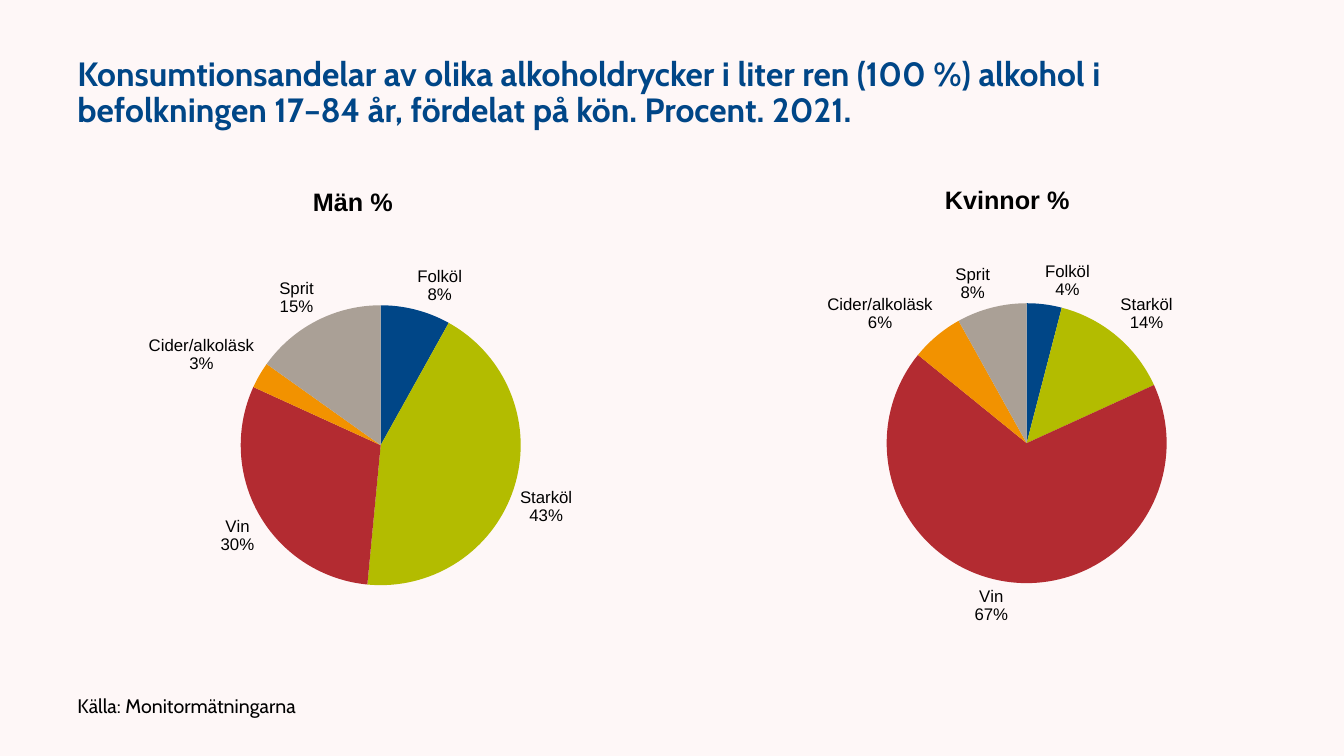
"""Build a slide comparing alcohol consumption shares of men and women."""
from dataclasses import dataclass

from lxml.etree import SubElement
from pptx import Presentation
from pptx.chart.chart import Chart
from pptx.chart.data import CategoryChartData
from pptx.dml.color import RGBColor
from pptx.enum.chart import XL_CHART_TYPE as ChartType, XL_LABEL_POSITION as LabelPos
from pptx.enum.text import MSO_ANCHOR as Anchor
from pptx.oxml.ns import qn
from pptx.slide import Slide
from pptx.text.text import Font
from pptx.util import Inches, Pt

BACKGROUND = RGBColor(0xFE, 0xF7, 0xF7)
BLACK = RGBColor(0, 0, 0)
BLUE = RGBColor(0x00, 0x46, 0x87)
GREEN = RGBColor(0xB3, 0xBC, 0x00)
RED = RGBColor(0xB3, 0x2B, 0x31)
ORANGE = RGBColor(0xF2, 0x92, 0x00)
GREY = RGBColor(0xAA, 0xA0, 0x96)

DRINKS = {"Folköl": BLUE, "Starköl": GREEN, "Vin": RED, "Cider/alkoläsk": ORANGE, "Sprit": GREY}
CHART_WIDTH, CHART_HEIGHT = 5.52, 4.96


@dataclass
class Label:
    text: str
    top: float
    width: float
    height: float
    size: int
    color: RGBColor
    bold: bool = False


@dataclass
class Pie:
    title: str
    left: float
    top: float
    shares: tuple[int, ...]
    plot: tuple[float, float, float, float]


LABELS = [
    Label("Konsumtionsandelar av olika alkoholdrycker i liter ren (100 %) alkohol i "
          "befolkningen 17–84 år, fördelat på kön. Procent. 2021.",
          0.3, 12, 1.25, 24, BLUE, True),
    Label("Källa: Monitormätningarna", 6.83, 6, 0.37, 14, BLACK),
]
PIES = [
    Pie("Kvinnor %", 7.23, 1.62, (4, 14, 67, 6, 8), (0.21, 0.28, 0.65, 0.56)),
    Pie("Män %", 0.74, 1.64, (8, 43, 30, 3, 15), (0.23, 0.28, 0.64, 0.56)),
]


def set_font(font: Font, name: str, size: int, color: RGBColor, bold: bool = False) -> None:
    font.name, font.size, font.bold = name, Pt(size), bold
    font.color.rgb = color


def add_label(s: Slide, label: Label) -> None:
    box = s.shapes.add_textbox(Inches(0.67), Inches(label.top), Inches(label.width), Inches(label.height))
    tf = box.text_frame
    tf.word_wrap = True
    tf.vertical_anchor = Anchor.MIDDLE
    tf.text = label.text
    p = tf.paragraphs[0]
    p.line_spacing = 0.9
    set_font(p.runs[0].font, "Cabin", label.size, label.color, label.bold)


def place_plot(chart: Chart, plot: tuple[float, float, float, float]) -> None:
    area = chart.element.chart.plotArea
    for old in area.findall(qn("c:layout")):
        area.remove(old)
    layout = SubElement(area, qn("c:layout"))
    area.insert(0, layout)
    manual = SubElement(layout, qn("c:manualLayout"))
    settings = [("layoutTarget", "inner"), ("xMode", "edge"), ("yMode", "edge"), *zip("xywh", plot)]
    for tag, value in settings:
        SubElement(manual, qn(f"c:{tag}")).set("val", str(value))


def add_pie(s: Slide, pie: Pie) -> None:
    data = CategoryChartData()
    data.categories = list(DRINKS)
    data.add_series("Series 1", pie.shares)
    frame = s.shapes.add_chart(ChartType.PIE, Inches(pie.left), Inches(pie.top),
                               Inches(CHART_WIDTH), Inches(CHART_HEIGHT), data)
    chart = frame.chart
    set_font(chart.font, "Calibri", 10, BLACK)
    chart.has_legend = False
    chart.has_title = True
    tf = chart.chart_title.text_frame
    tf.text = pie.title
    set_font(tf.paragraphs[0].runs[0].font, "Arial", 18, BLACK, True)
    chart.chart_title.include_in_layout = False
    place_plot(chart, pie.plot)

    plot = chart.plots[0]
    plot.vary_by_categories = True
    series = plot.series[0]
    for i, color in enumerate(DRINKS.values()):
        fill = series.points[i].format.fill
        fill.solid()
        fill.fore_color.rgb = color

    labels = series.data_labels
    set_font(labels.font, "Arial", 12, BLACK)
    labels.number_format = '0"%"'
    labels.number_format_is_linked = False
    labels.position = LabelPos.OUTSIDE_END
    labels.show_category_name = True
    labels.show_value = True
    dlbls = series.format.element if hasattr(series.format, "element") else plot.series[0]._element
    dlbls = dlbls.find(qn("c:dLbls"))
    separator = SubElement(dlbls, qn("c:separator"))
    separator.text = "\n"
    dlbls.find(qn("c:showBubbleSize")).addnext(separator)


def main() -> None:
    prs = Presentation()
    prs.slide_width, prs.slide_height = Inches(13.33), Inches(7.5)
    s = prs.slides.add_slide(prs.slide_layouts[6])
    s.background.fill.solid()
    s.background.fill.fore_color.rgb = BACKGROUND
    for label in LABELS:
        add_label(s, label)
    for pie in PIES:
        add_pie(s, pie)
    prs.save("out.pptx")


if __name__ == "__main__":
    main()
